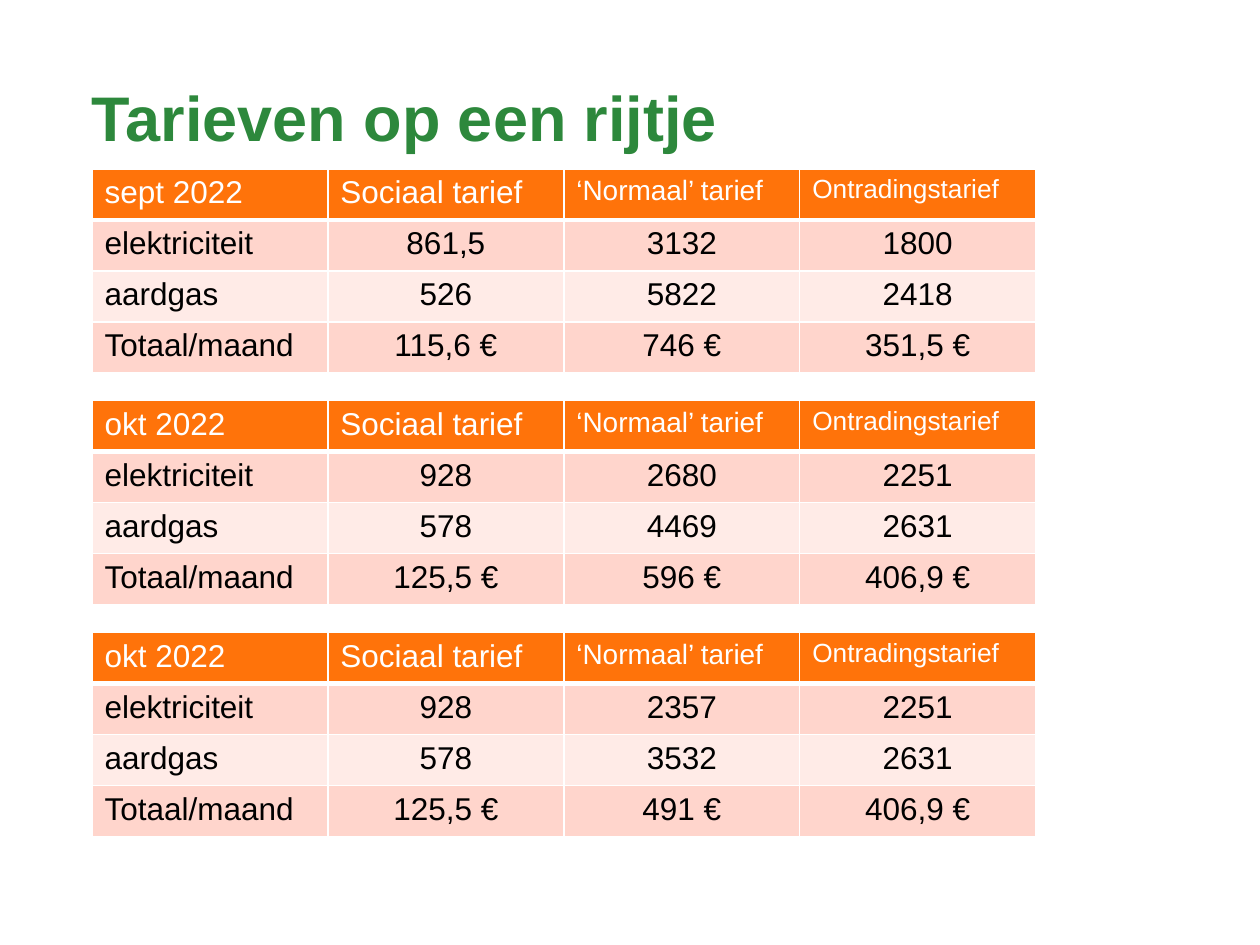
from lxml import etree
from pptx import Presentation
from pptx.dml.color import RGBColor
from pptx.enum import text
from pptx.oxml import ns
from pptx.util import Inches, Pt

TITLE = "Tarieven op een rijtje"
TARIFFS = ["Sociaal tarief", "‘Normaal’ tarief", "Ontradingstarief"]
HEADER_SIZES = [18, 18, 16, 15]
ROW_LABELS = ["elektriciteit", "aardgas", "Totaal/maand"]
PERIODS = [
    ("sept 2022", [("861,5", "3132", "1800"),
                   ("526", "5822", "2418"),
                   ("115,6 €", "746 €", "351,5 €")]),
    ("okt 2022", [("928", "2680", "2251"),
                  ("578", "4469", "2631"),
                  ("125,5 €", "596 €", "406,9 €")]),
    ("okt 2022", [("928", "2357", "2251"),
                  ("578", "3532", "2631"),
                  ("125,5 €", "491 €", "406,9 €")]),
]

FONT = "Arial"
WHITE, BLACK, GREEN = "FFFFFF", "000000", "2D883C"
ROW_FILLS = ["FF730A", "FFD5CC", "FFEBE7", "FFD5CC"]

LEFT, FIRST_TOP, TABLE_STEP = 0.73, 1.34, 1.84
TABLE_WIDTH, TABLE_HEIGHT = 7.49, 1.62


def rgb(value):
    return RGBColor.from_string(value)


def format_font(font, color, **values):
    font.color.rgb = rgb(color)
    for name, value in values.items():
        setattr(font, name, value)


def add_borders(cell, bottom_width):
    """Draw white cell borders; the line elements must precede the fill."""
    properties = cell._tc.get_or_add_tcPr()
    widths = {"lnL": 1, "lnR": 1, "lnT": 1, "lnB": bottom_width}
    for position, (side, width) in enumerate(widths.items()):
        line = etree.Element(ns.qn(f"a:{side}"), w=str(Pt(width)))
        fill = etree.SubElement(line, ns.qn("a:solidFill"))
        etree.SubElement(fill, ns.qn("a:srgbClr"), val=WHITE)
        properties.insert(position, line)


def add_tariff_table(slide, top, period, values):
    rows = [[period, *TARIFFS]]
    rows += [[label, *amounts] for label, amounts in zip(ROW_LABELS, values)]
    table = slide.shapes.add_table(
        len(rows), len(rows[0]), Inches(LEFT), Inches(top),
        Inches(TABLE_WIDTH), Inches(TABLE_HEIGHT)).table
    for r, row in enumerate(rows):
        is_header = r == 0
        for c, content in enumerate(row):
            cell = table.cell(r, c)
            cell.text = content
            cell.fill.solid()
            cell.fill.fore_color.rgb = rgb(ROW_FILLS[r])
            add_borders(cell, 3 if is_header else 1)
            paragraph = cell.text_frame.paragraphs[0]
            if not is_header and c > 0:
                paragraph.alignment = text.PP_ALIGN.CENTER
            format_font(paragraph.runs[0].font, WHITE if is_header else BLACK,
                        name=FONT, bold=False,
                        size=Pt(HEADER_SIZES[c] if is_header else 18))


def add_title(slide):
    title = slide.shapes.title
    title.left, title.top = Inches(LEFT), Inches(0.71)
    title.width, title.height = Inches(6.77), Inches(1.1)
    frame = title.text_frame
    frame.text = TITLE
    layout = {"margin_left": 0, "margin_top": 0, "margin_right": 0,
              "margin_bottom": 0, "word_wrap": True,
              "auto_size": text.MSO_AUTO_SIZE.NONE,
              "vertical_anchor": text.MSO_ANCHOR.TOP}
    for name, value in layout.items():
        setattr(frame, name, value)
    paragraph = frame.paragraphs[0]
    paragraph.alignment = text.PP_ALIGN.LEFT
    paragraph.line_spacing = 0.86
    format_font(paragraph.runs[0].font, GREEN, name=FONT, size=Pt(36), bold=True)


def main():
    deck = Presentation()
    deck.slide_width, deck.slide_height = Inches(10), Inches(7.5)
    slide = deck.slides.add_slide(deck.slide_layouts[5])
    add_title(slide)
    for index, (period, values) in enumerate(PERIODS):
        add_tariff_table(slide, FIRST_TOP + index * TABLE_STEP, period, values)
    deck.save("out.pptx")


if __name__ == "__main__":
    main()
